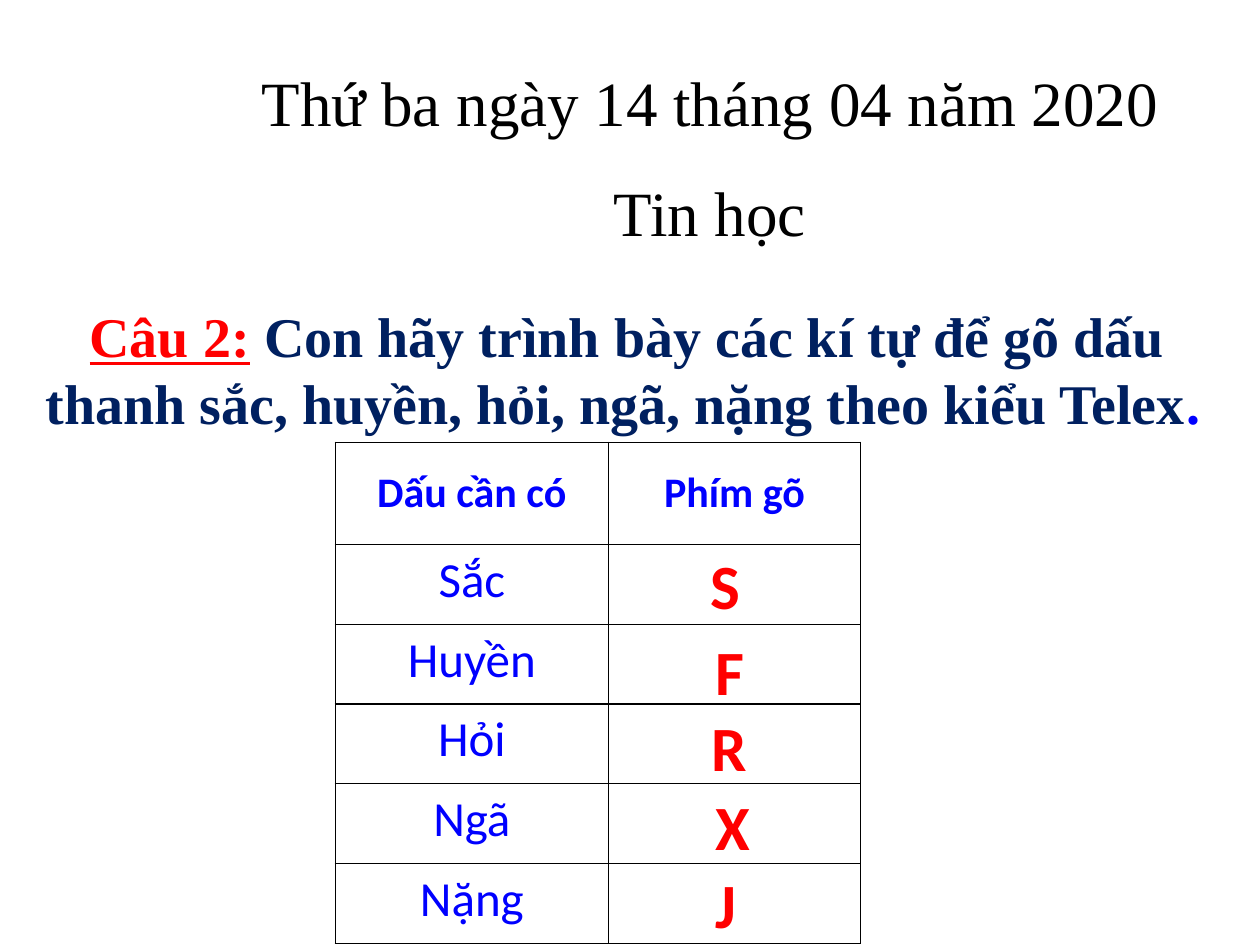
from lxml.etree import SubElement
from pptx import Presentation
from pptx.dml.color import RGBColor
from pptx.enum.text import MSO_ANCHOR as Anchor, MSO_AUTO_SIZE as AutoSize, PP_ALIGN as Align
from pptx.oxml.ns import qn
from pptx.util import Inches, Pt

BLACK = RGBColor(0x00, 0x00, 0x00)
RED = RGBColor(0xFF, 0x00, 0x00)
BLUE = RGBColor(0x00, 0x00, 0xFF)
NAVY = RGBColor(0x00, 0x20, 0x60)
SERIF = "Times New Roman"
SANS = "Calibri"

TONE_MARKS = ["Sắc", "Huyền", "Hỏi", "Ngã", "Nặng"]
KEYS = [("S", 5.54, 4.29), ("F", 5.58, 4.97), ("R", 5.55, 5.57), ("X", 5.58, 6.2), ("J", 5.58, 6.82)]


def add_run(paragraph, text, size, color, name, bold=False, underline=False):
    """Append one formatted run to a paragraph."""
    run = paragraph.add_run()
    run.text = text
    font = run.font
    font.size, font.name, font.bold, font.underline = Pt(size), name, bold, underline
    font.color.rgb = color


def add_text_box(slide, left, top, width, height):
    """Add a wrapping text box and return its first paragraph."""
    frame = slide.shapes.add_textbox(left, top, width, height).text_frame
    frame.word_wrap = True
    frame.auto_size = AutoSize.SHAPE_TO_FIT_TEXT
    return frame.paragraphs[0]


def place_heading(slide, left, top, width, height):
    """Set the date and the subject in the title placeholder."""
    title = slide.shapes.title
    title.left, title.top, title.width, title.height = left, top, width, height
    frame = title.text_frame
    frame.auto_size = AutoSize.NONE
    frame.vertical_anchor = Anchor.TOP
    date = frame.paragraphs[0]
    subject = frame.add_paragraph()
    subject.space_before = Pt(20)
    for paragraph, text in ((date, "Thứ ba ngày 14 tháng 04 năm 2020"), (subject, "Tin học")):
        paragraph.alignment = Align.CENTER
        add_run(paragraph, text, 36, BLACK, SERIF)


def place_question(slide, left, top, width, height):
    """Write the question with its underlined label."""
    paragraph = add_text_box(slide, left, top, width, height)
    paragraph.alignment = Align.CENTER
    paragraph._p.get_or_add_pPr().set("indent", str(Inches(0.07)))
    add_run(paragraph, "Câu 2:", 32, RED, SERIF, bold=True, underline=True)
    add_run(paragraph, " ", 32, RED, SERIF, bold=True)
    question = "Con hãy trình bày các kí tự để gõ dấu thanh sắc, huyền, hỏi, ngã, nặng theo kiểu Telex"
    add_run(paragraph, question, 32, NAVY, SERIF, bold=True)
    add_run(paragraph, ".", 32, BLUE, SERIF, bold=True)


def format_cell(cell):
    """Clear the fill of a cell and give it thin black borders."""
    properties = cell._tc.get_or_add_tcPr()
    for side in ("lnL", "lnR", "lnT", "lnB"):
        line = SubElement(properties, qn(f"a:{side}"), w=str(Pt(0.75)))
        fill = SubElement(line, qn("a:solidFill"))
        SubElement(fill, qn("a:srgbClr"), val=str(BLACK))
    cell.fill.background()


def place_table(slide, left, top, width, height):
    """Build the table of tone marks and keys."""
    rows = [("Dấu cần có", "Phím gõ")] + [(mark, "") for mark in TONE_MARKS]
    table = slide.shapes.add_table(len(rows), 2, left, top, width, height).table
    table.horz_banding = False
    table.columns[0].width = Inches(2.17)
    table.columns[1].width = width - Inches(2.17)
    header_height = Inches(0.81)
    for row_index, texts in enumerate(rows):
        is_header = row_index == 0
        body_height = (height - header_height) // len(TONE_MARKS)
        table.rows[row_index].height = header_height if is_header else body_height
        for column_index, text in enumerate(texts):
            cell = table.cell(row_index, column_index)
            format_cell(cell)
            cell.vertical_anchor = Anchor.MIDDLE if is_header else Anchor.TOP
            if text:
                paragraph = cell.text_frame.paragraphs[0]
                paragraph.alignment = Align.CENTER
                add_run(paragraph, text, 24 if is_header else 28, BLUE, SANS, bold=is_header)


def place_key(slide, key, left, top, width, height):
    """Write one answer key over its table cell."""
    paragraph = add_text_box(slide, left, top, width, height)
    add_run(paragraph, key, 36, RED, SANS, bold=True)


def main():
    """Build and save the slide."""
    presentation = Presentation()
    presentation.slide_width, presentation.slide_height = Inches(10), Inches(7.5)
    slide = presentation.slides.add_slide(presentation.slide_layouts[5])
    place_heading(slide, Inches(1.46), Inches(0.45), Inches(8.35), Inches(1.57))
    place_question(slide, Inches(0.03), Inches(2.34), Inches(9.83), Inches(1.18))
    place_table(slide, Inches(2.66), Inches(3.51), Inches(4.17), Inches(3.98))
    for key, left, top in KEYS:
        place_key(slide, key, Inches(left), Inches(top), Inches(1.42), Inches(0.71))
    presentation.save("out.pptx")


if __name__ == "__main__":
    main()
